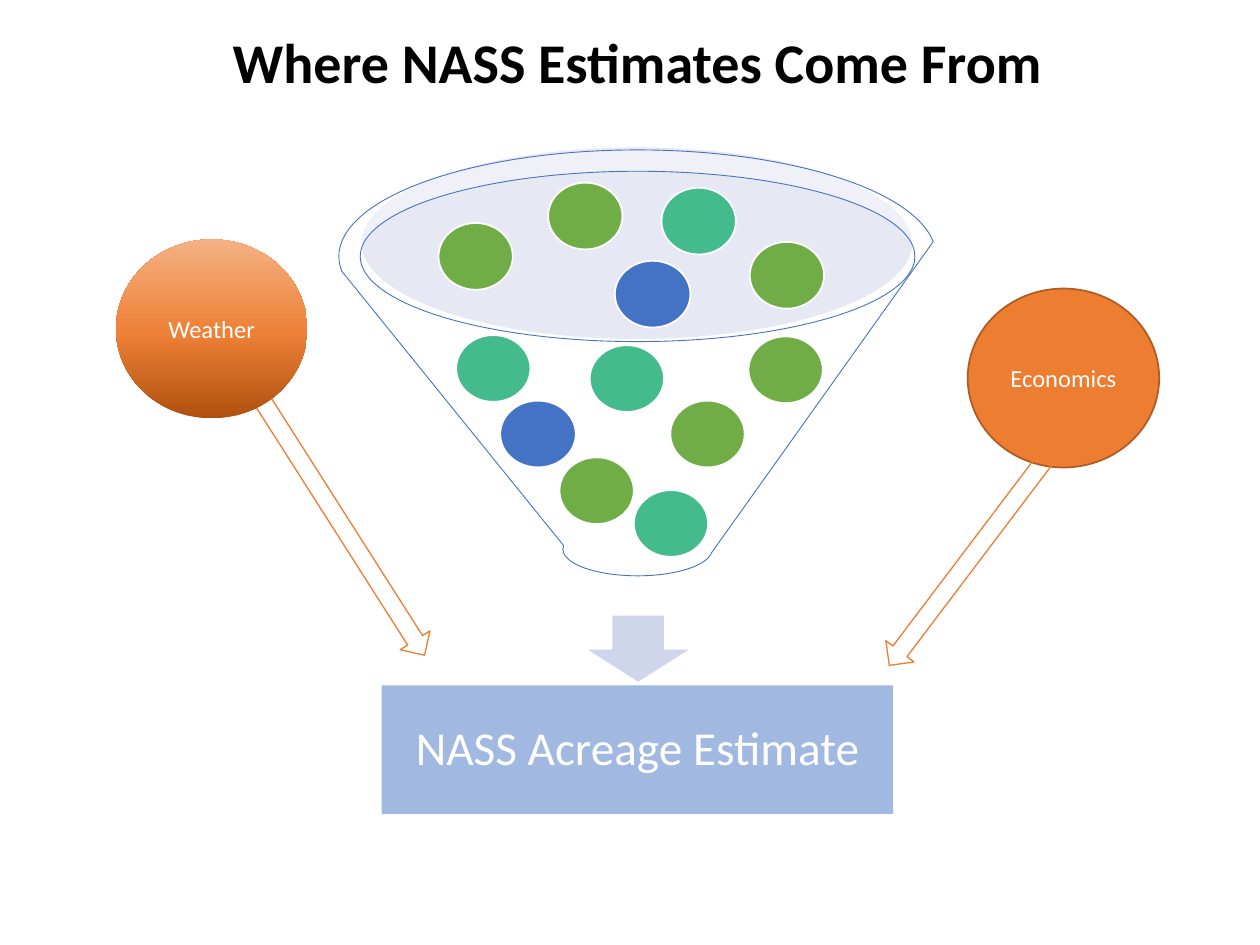
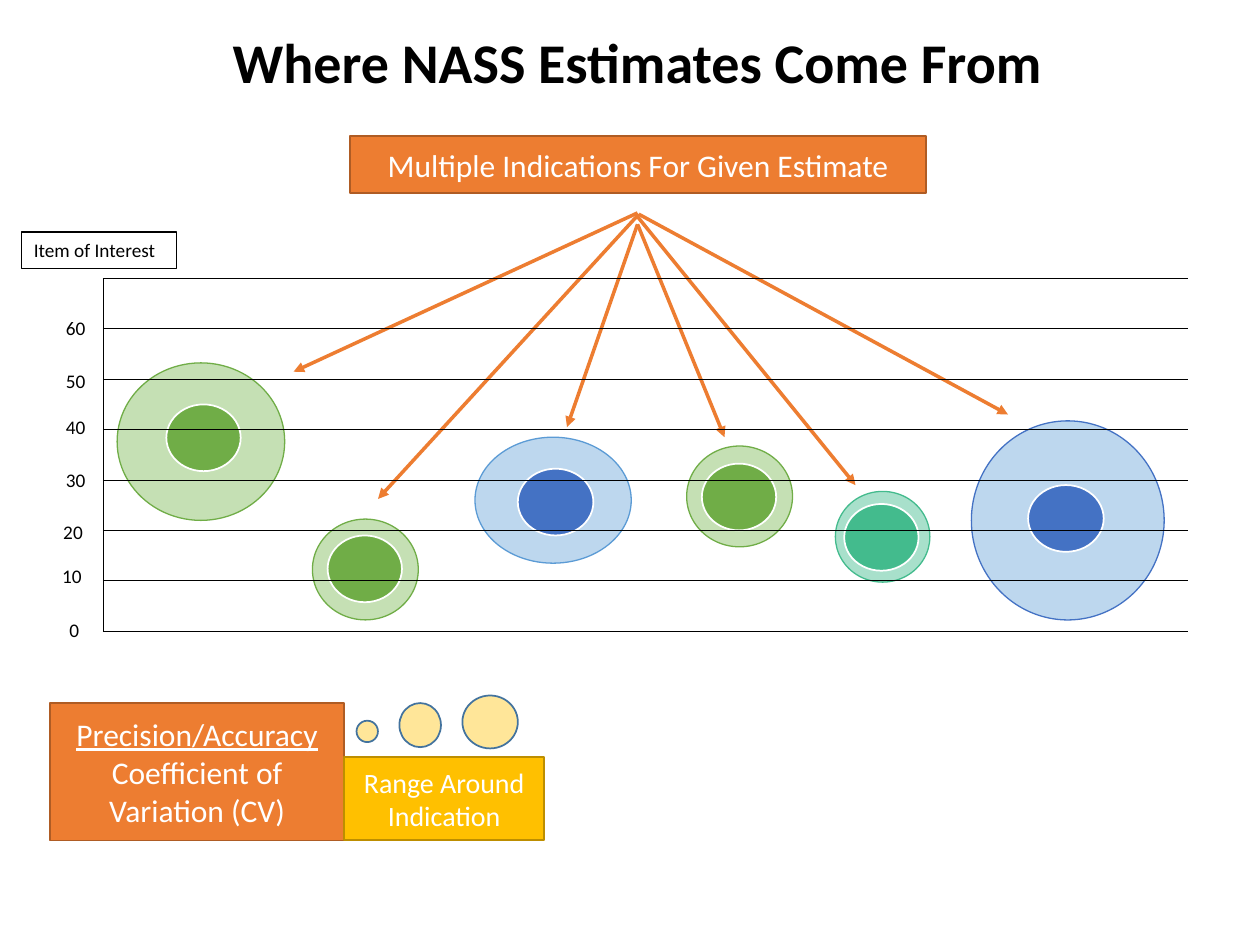
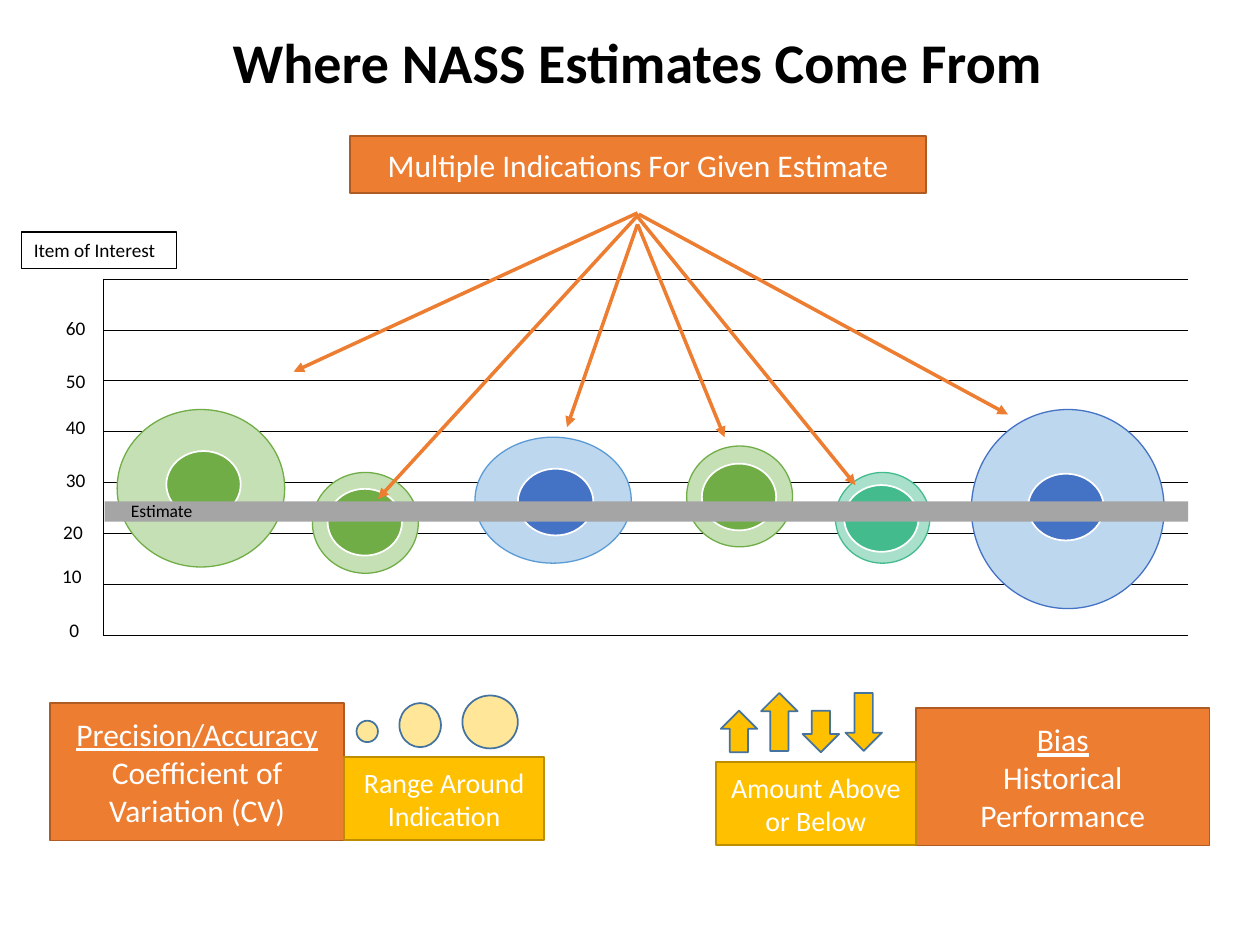
from lxml import etree
from pptx import Presentation
from pptx import util as u
from pptx.dml.color import RGBColor
from pptx.enum import shapes, text
from pptx.oxml import ns

PX = 9144  # 100 px to the inch
SHAPE = shapes.MSO_SHAPE
COLORS = {
    "black": "000000", "white": "FFFFFF", "gray": "A5A5A5",
    "orange": "ED7D31", "rust": "AF5C24", "gold": "FFC000", "bronze": "BD8E00",
    "cream": "FFE699", "steel": "43739E", "sky": "5B9BD5",
    "blue": "4472C4", "green": "70AD47", "teal": "43BB8D",
    "pale blue": "BDD7EE", "pale green": "C5E0B4", "pale teal": "A8E0CB",
    "lavender": "C1C9E4", "mist": "CFD5EA",
    "dark ember": "B0500F", "ember": "EE8137", "light ember": "F4B183",
}


def sub(parent, tag, **attrs):
    return etree.SubElement(parent, ns.qn(tag), attrs)


class Deck:
    font = "Calibri"
    title = "Where NASS Estimates Come From"

    def __init__(self):
        self.prs = Presentation()
        self.prs.slide_width, self.prs.slide_height = 1000 * PX, 750 * PX
        self.s = None

    def slide(self):
        self.s = self.prs.slides.add_slide(self.prs.slide_layouts[6])

    def heading(self):
        self.label((120, 17, 772, 64), self.title, size=32, bold=True)

    def color(self, name):
        return RGBColor.from_string(COLORS[name])

    def shape(self, kind, box, fill=None, line=None, width=1, alpha=None, rot=0):
        sp = self.s.shapes.add_shape(kind, *(v * PX for v in box))
        sp.shadow.inherit = False
        sp.rotation = rot
        if fill:
            sp.fill.solid()
            sp.fill.fore_color.rgb = self.color(fill)
        else:
            sp.fill.background()
        if alpha:
            rgb = sp._element.spPr.find(".//" + ns.qn("a:srgbClr"))
            sub(rgb, "a:alpha", val=str(alpha * 1000))
        if line:
            sp.line.color.rgb = self.color(line)
            sp.line.width = u.Pt(width)
        else:
            sp.line.fill.background()
        return sp

    def gradient(self, sp, stops):
        sp.fill.gradient()
        grad = sp._element.spPr.find(ns.qn("a:gradFill"))
        for child in list(grad):
            grad.remove(child)
        gs_list = sub(grad, "a:gsLst")
        for pos, name in stops:
            gs = sub(gs_list, "a:gs", pos=str(pos * 1000))
            sub(gs, "a:srgbClr", val=COLORS[name])
        sub(grad, "a:lin", ang="16200000", scaled="0")

    def put_text(self, sp, *lines, color="white", align="CENTER", anchor="MIDDLE",
                 margins=(10, 5, 10, 5), wrap=True, spacing=None, underline_first=False, **fmt):
        tf = sp.text_frame
        tf.word_wrap = wrap
        tf.vertical_anchor = text.MSO_ANCHOR[anchor]
        for side, m in zip(("left", "top", "right", "bottom"), margins):
            setattr(tf, "margin_" + side, m * PX)
        size = u.Pt(fmt.pop("size"))
        for i, line in enumerate(lines):
            p = tf.add_paragraph() if i else tf.paragraphs[0]
            p.alignment = text.PP_ALIGN[align]
            if spacing:
                p.line_spacing = spacing
            r = p.add_run()
            r.text = line
            style = {"name": self.font, "size": size, **fmt}
            if underline_first and i == 0:
                style["underline"] = True
            for key, value in style.items():
                setattr(r.font, key, value)
            r.font.color.rgb = self.color(color)

    def label(self, box, line, **fmt):
        sp = self.s.shapes.add_textbox(*(v * PX for v in box))
        self.put_text(sp, line, color="black", anchor="TOP", wrap=False, **fmt)

    def panel(self, box, *lines, fill="orange", line="rust", size=18, **fmt):
        self.put_text(self.shape(SHAPE.RECTANGLE, box, fill, line), *lines, size=size, **fmt)

    def dot(self, x, y, tone):
        w = 60 if tone == "blue" else 59
        self.shape(SHAPE.OVAL, (x, y, w, 53), tone, "white")

    def arrow(self, start, end):
        cx = self.s.shapes.add_connector(shapes.MSO_CONNECTOR.STRAIGHT,
                                         *(v * PX for v in (*start, *end)))
        cx.line.color.rgb = self.color("orange")
        cx.line.width = u.Pt(2)
        sp_pr = cx._element.spPr
        sub(sp_pr.find(ns.qn("a:ln")), "a:tailEnd", type="triangle")
        sub(sp_pr, "a:effectLst")

    def grid(self, box, rows):
        """Ruled table whose first and last rows stay open."""
        x, y, w, h = (v * PX for v in box)
        table = self.s.shapes.add_table(rows, 1, x, y, w, h).table
        table.first_row = table.horz_banding = False
        for i, row in enumerate(table.rows):
            row.height = h // rows
            cell = row.cells[0]
            cell.margin_top = cell.margin_bottom = 0
            tc_pr = cell._tc.get_or_add_tcPr()
            inner = 0 < i < rows - 1
            ruled = {"a:lnL": inner, "a:lnR": False,
                     "a:lnT": i > 0, "a:lnB": i < rows - 1}
            for tag, shown in ruled.items():
                ln = sub(tc_pr, tag, w="6350")
                if shown:
                    sub(sub(ln, "a:solidFill"), "a:srgbClr", val=COLORS["black"])
                else:
                    sub(ln, "a:noFill")
            cell.fill.background()


# Bubbles: x, width, height, tone, edge, offset of the core
BUBBLES = [
    (377, 124, 100, "blue", "sky", 34, 25),
    (545, 84, 80, "green", "green", 12, 14),
    (93, 133, 125, "green", "green", 39, 33),
    (663, 75, 72, "teal", "teal", 7, 10),
    (771, 153, 158, "blue", "blue", 45, 51),
    (248, 84, 80, "green", "green", 12, 13),
]
ARROWS = [
    ((506, 169), (233, 295)), ((507, 170), (800, 329)), ((507, 170), (300, 396)),
    ((506, 172), (679, 385)), ((506, 178), (450, 339)), ((506, 178), (575, 347)),
]
SCALE = [(41, 486), (39, 443), (40, 408), (42, 367), (42, 325), (42, 288), (42, 246)]


def funnel_slide(d):
    d.slide()
    d.shape(SHAPE.DOWN_ARROW, (251, 273, 28, 268), line="orange", width=0.75, rot=327.5)
    d.heading()

    # Funnel and result
    d.shape(SHAPE.OVAL, (287, 117, 437, 152), "lavender", alpha=40)
    d.shape(SHAPE.DOWN_ARROW, (464, 488, 85, 54), "mist", "white")
    result = d.shape(SHAPE.RECTANGLE, (303, 544, 406, 102), "blue", alpha=50)
    d.put_text(result, "NASS Acreage Estimate", size=27, margins=(21,) * 4, spacing=0.9)
    d.shape(SHAPE.FUNNEL, (269, 119, 474, 338), "white", "blue", 0.5, alpha=40)

    # Outside influences
    economics = d.shape(SHAPE.OVAL, (768, 229, 152, 142), "orange", "rust")
    weather = d.shape(SHAPE.OVAL, (92, 190, 152, 142))
    d.gradient(weather, [(0, "dark ember"), (48, "ember"), (100, "light ember")])
    d.put_text(economics, "Economics", size=14)
    d.put_text(weather, "Weather", size=14)
    d.shape(SHAPE.DOWN_ARROW, (763, 316, 28, 236), line="orange", width=0.75, rot=37.1)

    # Indications inside the funnel
    dots = {
        "green": [(435, 145), (594, 267), (595, 192), (348, 177), (444, 363), (532, 318)],
        "blue": [(397, 318), (488, 207)],
        "teal": [(525, 149), (362, 266), (503, 389), (468, 274)],
    }
    for tone, places in dots.items():
        for x, y in places:
            d.dot(x, y, tone)


def bubbles(d, tops):
    for (x, w, h, tone, edge, dx, dy), y in zip(BUBBLES, tops):
        d.shape(SHAPE.OVAL, (x, y, w, h), "pale " + tone, edge, 0.75)
        d.dot(x + dx, y + dy, tone)


def indications(d):
    d.panel((278, 108, 457, 45), "Multiple Indications For Given Estimate")
    for start, end in ARROWS:
        d.arrow(start, end)


def precision(d):
    d.panel((40, 558, 233, 109), "Precision/Accuracy", "Coefficient of Variation (CV)",
            underline_first=True)
    d.panel((273, 601, 159, 66), "Range Around Indication",
            fill="gold", line="bronze", size=16)
    for box in ((283, 572, 17, 17), (317, 558, 33, 35), (367, 552, 44, 42)):
        d.shape(SHAPE.OVAL, box, "cream", "steel")


def bias(d):
    d.panel((727, 562, 233, 109), "Bias", "Historical Performance", underline_first=True)
    d.panel((568, 605, 159, 66), "Amount Above or Below",
            fill="gold", line="bronze", size=16)
    for x, y, h, rot in ((572, 564, 33, 0), (604, 550, 46, 0),
                         (637, 564, 33, 180), (671, 550, 46, 180)):
        d.shape(SHAPE.UP_ARROW, (x, y, 29, h), "gold", "steel", rot=rot)


def axis(d):
    item = d.shape(SHAPE.RECTANGLE, (17, 184, 123, 29), line="black", width=0.75)
    d.put_text(item, "Item of Interest", size=11, color="black", align="LEFT", anchor="TOP")
    for i, (x, y) in enumerate(SCALE):
        d.label((x, y, 36, 29), str(i * 10), size=11)


def range_slide(d):
    d.slide()
    d.heading()
    bubbles(d, (347, 354, 288, 390, 334, 412))
    indications(d)
    precision(d)
    d.grid((82, 181, 861, 360), 9)
    axis(d)


def bias_slide(d):
    d.slide()
    d.grid((82, 181, 861, 364), 9)
    d.heading()
    bubbles(d, (347, 354, 325, 375, 325, 375))
    indications(d)
    precision(d)
    bias(d)
    axis(d)

    # Estimate line
    bar = d.shape(SHAPE.RECTANGLE, (83, 398, 860, 16), "gray")
    d.put_text(bar, "Estimate", size=10, color="black", align="LEFT",
               margins=(21, 0, 21, 0), spacing=0.9)


def main():
    d = Deck()
    funnel_slide(d)
    range_slide(d)
    bias_slide(d)
    d.prs.save("out.pptx")


if __name__ == "__main__":
    main()
